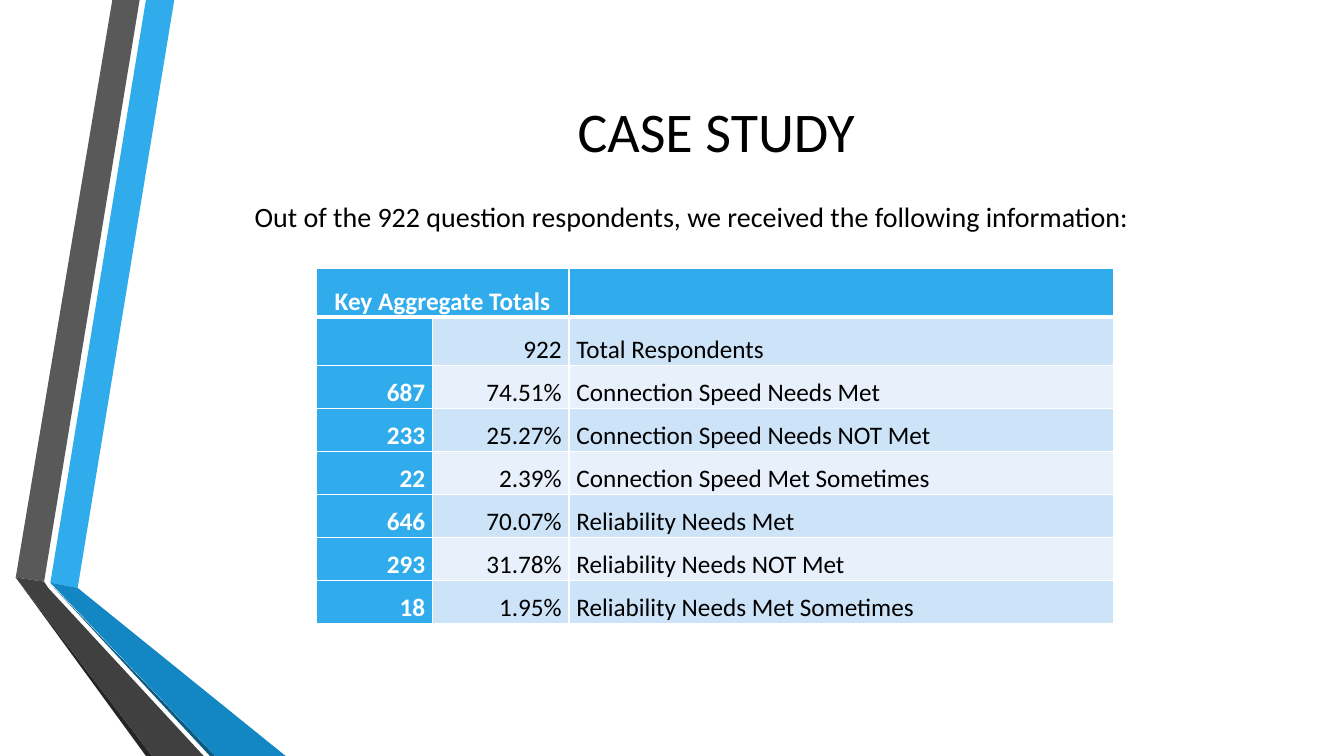
from lxml.etree import SubElement
from pptx import Presentation
from pptx.dml.color import RGBColor
from pptx.enum.text import MSO_ANCHOR, PP_ALIGN
from pptx.oxml.ns import qn
from pptx.util import Pt

PX = 9525
WHITE, BLACK, BLUE = "FFFFFF", "000000", "30ACEC"
BANDS = "CDE3F8", "E8F1FB"
LEFT, MID, RIGHT = PP_ALIGN.LEFT, PP_ALIGN.CENTER, PP_ALIGN.RIGHT

RIBBONS = [
    (BLUE, [(48, 555), (74, 560), (166, 0), (139, 0)]),
    ("595959", [(133, 0), (107, 0), (15, 550), (42, 554)]),
    ("262626", [(15, 550), (139, 720), (145, 720)]),
    ("0C5A82", [(48, 556), (200, 720), (205, 720)]),
    ("1287C3", [(48, 555), (205, 720), (272, 720), (74, 560)]),
    ("404040", [(194, 720), (46, 560), (42, 554), (15, 550), (145, 720)]),
]
COLS = [111, 130, 519]
ROWS = [46, 46] + [41] * 6
TOTALS = [
    ("Key Aggregate Totals", "", ""),
    ("", "922", "Total Respondents"),
    ("687", "74.51%", "Connection Speed Needs Met"),
    ("233", "25.27%", "Connection Speed Needs NOT Met"),
    ("22", "2.39%", "Connection Speed Met Sometimes"),
    ("646", "70.07%", "Reliability Needs Met"),
    ("293", "31.78%", "Reliability Needs NOT Met"),
    ("18", "1.95%", "Reliability Needs Met Sometimes"),
]


def tint(code):
    return RGBColor.from_string(code)


class Deck:
    font = "Calibri"

    def __init__(self):
        self.show = Presentation()
        self.show.slide_width, self.show.slide_height = 1280 * PX, 720 * PX
        self.slide = self.show.slides.add_slide(self.show.slide_layouts[5])

    def add_run(self, frame, text, size, color=BLACK, align=LEFT, bold=False):
        para = frame.paragraphs[0]
        para.alignment = align
        run = para.add_run()
        run.text = text
        font = run.font
        font.name, font.size, font.bold = self.font, Pt(size), bold
        font.color.rgb = tint(color)
        return para

    def place(self, shape, x, y, w, h):
        shape.left, shape.top = x * PX, y * PX
        shape.width, shape.height = w * PX, h * PX
        shape.text_frame.word_wrap = True
        shape.text_frame.vertical_anchor = MSO_ANCHOR.MIDDLE

    def title(self, text, *box):
        shape = self.slide.shapes.title
        self.place(shape, *box)
        self.add_run(shape.text_frame, text, 40, align=MID)

    def text(self, text, *box):
        shape = self.slide.shapes.add_textbox(0, 0, 0, 0)
        self.place(shape, *box)
        para = self.add_run(shape.text_frame, text, 20)
        para.line_spacing, para.space_after = 1.07, Pt(8)

    def ribbon(self, color, points):
        pen = self.slide.shapes.build_freeform(*points[0], scale=PX)
        pen.add_line_segments(points[1:], close=True)
        shape = pen.convert_to_shape()
        shape.shadow.inherit = False
        shape.fill.solid()
        shape.fill.fore_color.rgb = tint(color)
        shape.line.fill.background()

    def edge(self, cell, side, width):
        props = cell._tc.get_or_add_tcPr()
        line = SubElement(props, qn("a:ln" + side), w=str(Pt(width)))
        fill = SubElement(line, qn("a:solidFill"))
        SubElement(fill, qn("a:srgbClr"), val=WHITE)

    def cell(self, cell, text, row, col):
        head = row == 0
        key = head or col == 0
        cell.margin_left = cell.margin_right = 7 * PX
        cell.margin_top = cell.margin_bottom = 0
        cell.vertical_anchor = MSO_ANCHOR.BOTTOM
        for side in "LRTB":
            thick = (row, side) in ((0, "B"), (1, "T"))
            self.edge(cell, side, 3 if thick else 1)
        cell.fill.solid()
        cell.fill.fore_color.rgb = tint(BLUE if key else BANDS[(row - 1) % 2])
        if text:
            align = MID if head else (RIGHT, RIGHT, LEFT)[col]
            para = self.add_run(cell.text_frame, text, 18,
                                WHITE if key else BLACK, align, key)
            para.line_spacing = 1.07

    def table(self, x, y, cols, rows, data):
        frame = self.slide.shapes.add_table(
            len(rows), len(cols), x * PX, y * PX, sum(cols) * PX, sum(rows) * PX)
        grid = frame.table
        for col, width in enumerate(cols):
            grid.columns[col].width = width * PX
        for row, height in enumerate(rows):
            grid.rows[row].height = height * PX
            for col, text in enumerate(data[row]):
                self.cell(grid.cell(row, col), text, row, col)
        grid.cell(0, 0).merge(grid.cell(0, 1))


def main():
    deck = Deck()
    for color, points in RIBBONS:
        deck.ribbon(color, points)
    deck.title("CASE STUDY", 156, 72, 1052, 103)
    deck.text("Out of the 922 question respondents, "
              "we received the following information:", 233, 172, 951, 65)
    deck.table(301, 256, COLS, ROWS, TOTALS)
    deck.show.save("out.pptx")


if __name__ == "__main__":
    main()
